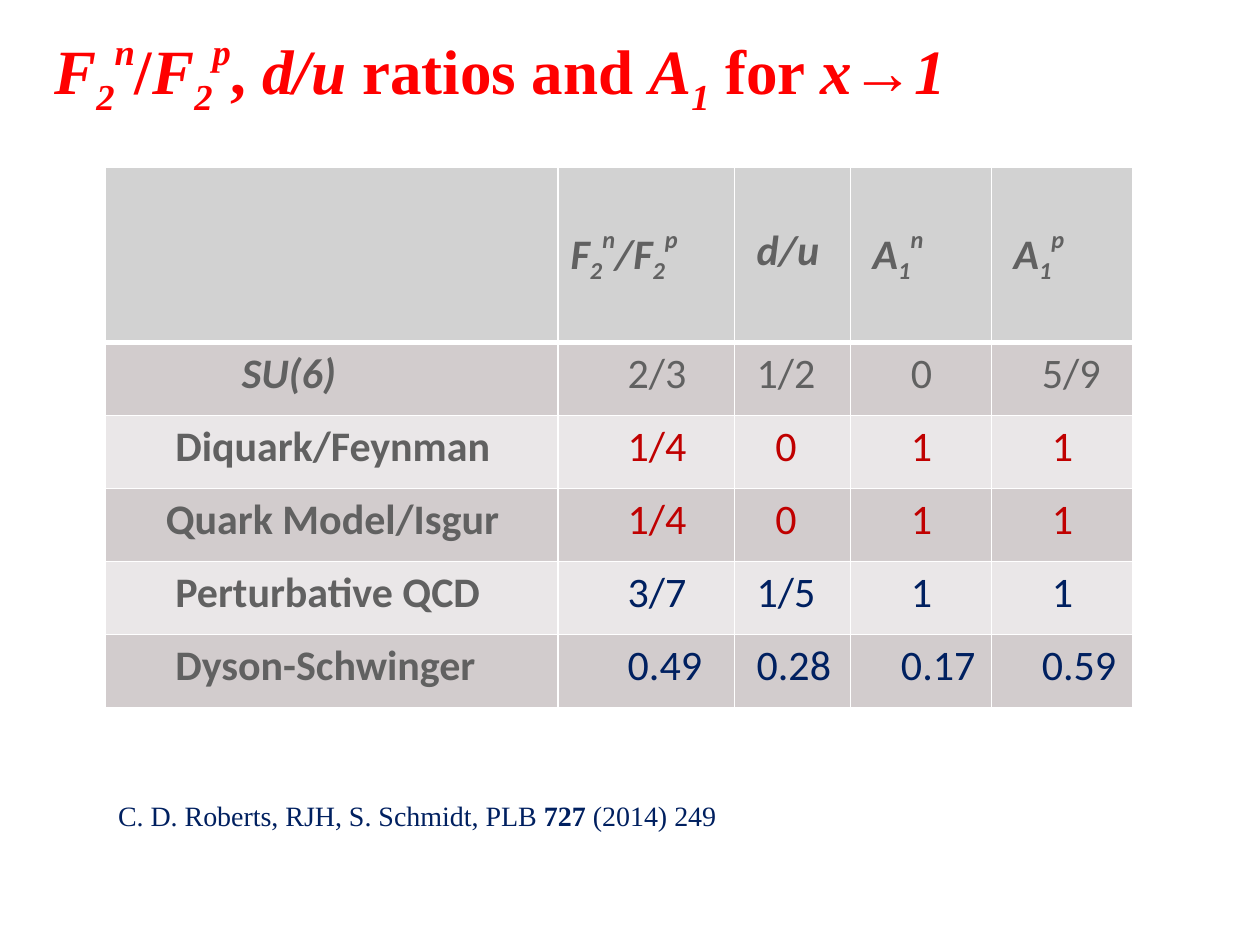
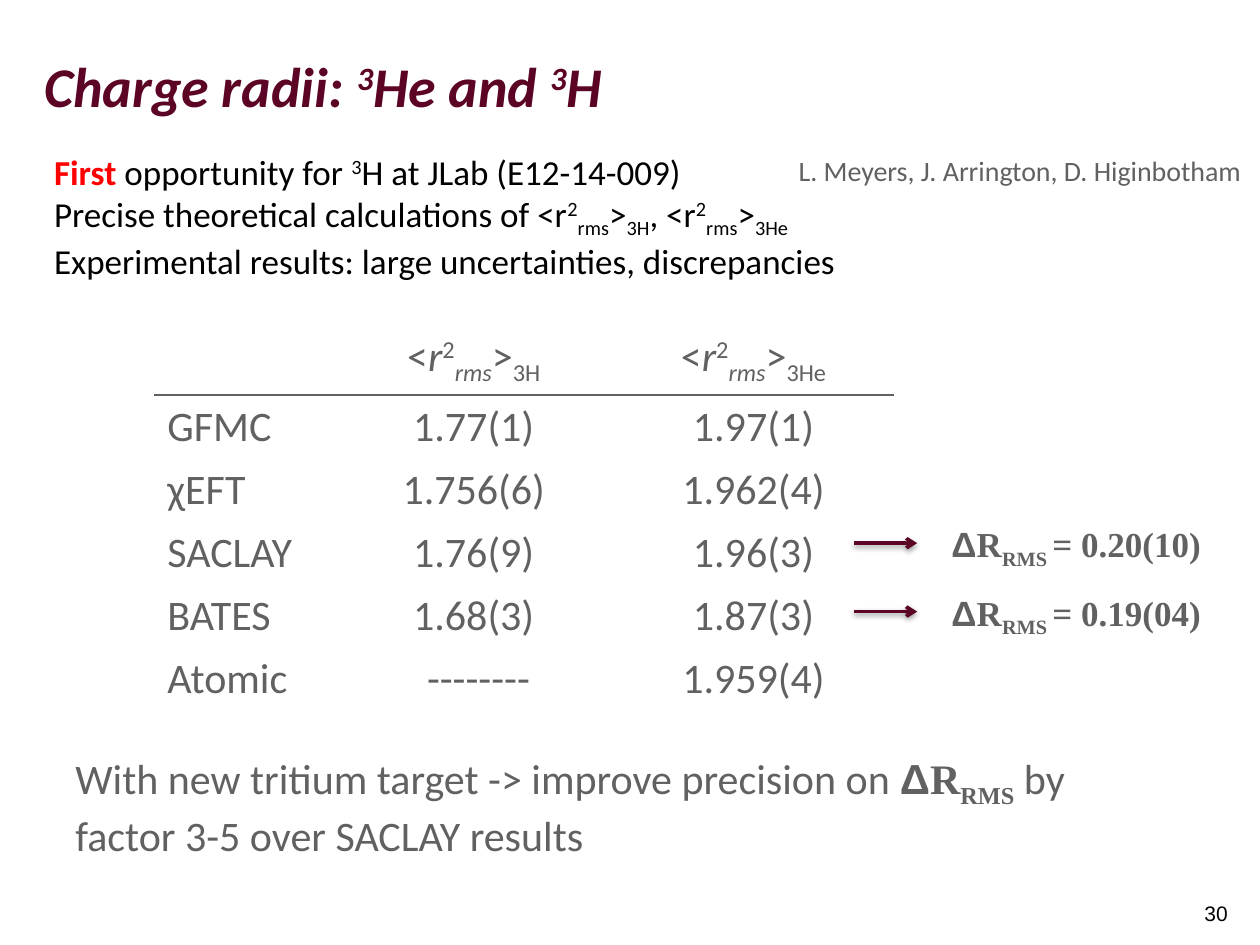
from dataclasses import dataclass, replace

import pptx
import pptx.dml.color
import pptx.enum.shapes
import pptx.enum.text
import pptx.util
from lxml import etree
from pptx.oxml.ns import qn

Cm, Pt = pptx.util.Cm, pptx.util.Pt
RGB = pptx.dml.color.RGBColor
ALIGN = pptx.enum.text.PP_ALIGN
ANCHOR = pptx.enum.text.MSO_ANCHOR

RED = RGB(0xFF, 0x00, 0x00)
DARK_RED = RGB(0xC0, 0x00, 0x00)
NAVY = RGB(0x00, 0x20, 0x60)
MAROON = RGB(0x5C, 0x04, 0x26)
GREY = RGB(0x61, 0x61, 0x61)
BLACK = RGB(0x00, 0x00, 0x00)
WHITE = RGB(0xFF, 0xFF, 0xFF)
HEADER_FILL = RGB(0xD2, 0xD2, 0xD2)
BAND_FILLS = RGB(0xD2, 0xCC, 0xCD), RGB(0xEA, 0xE7, 0xE8)


@dataclass
class Style:
    """Flags: b bold, i italic, ^ superscript, _ subscript."""
    font: str
    size: int
    color: RGB
    flags: str = ""
    sup: int = 30


SERIF_TITLE = Style("Times New Roman", 36, RED, "b", 46)
SANS_TITLE = Style("Calibri", 32, MAROON, "bi")
TABLE = Style("Calibri", 24, GREY)
RATIO_HEADER = replace(TABLE, flags="b", sup=50)
REFERENCE = Style("Times New Roman", 16, NAVY)
INTRO = Style("Calibri", 20, BLACK)
FIRST = replace(INTRO, color=RED)
AUTHORS = Style("Calibri", 16, GREY)
PAGE = Style("Arial", 12, BLACK)
DELTA = Style("Arial", 20, GREY)
DELTA_R = Style("Times New Roman", 20, GREY)

# A run is a string or (text, flags[, style]).
RATIO_TITLE = [("F", "bi"), ("2", "bi_"), ("n", "bi^"), "/", ("F", "bi"), ("2", "bi_"),
               ("p", "bi^"), ", ", ("d/u", "bi"), " ratios and ", ("A", "bi"),
               ("1", "bi_"), " for ", ("x", "bi"), "→", ("1", "bi")]
RATIO_COLS = [9.12, 3.56, 2.34, 2.84, 2.84]
RATIO_ROWS = [3.53] + [1.47] * 5
RATIO_HEADS = [
    (0, []),
    (0, [("F", "bi"), ("2", "bi_"), ("n", "bi^"), ("/F", "bi"), ("2", "bi_"), ("p", "bi^")]),
    (0.19, [("d/u", "bi")]),
    (0.19, [("A", "bi"), ("1", "bi_"), ("n", "bi^")]),
    (0.19, [("A", "bi"), ("1", "bi_"), ("p", "bi^")]),
]
# Model, flags, value colour, values, indents in cm
RATIO_MODELS = [
    ("SU(6)", "bi", GREY, ["2/3", "1/2", "0", "5/9"], [2.49, 1.15, 0.19, 0.96, 0.76]),
    ("Diquark/Feynman", "b", DARK_RED, ["1/4", "0", "1", "1"], [1.15, 1.15, 0.57, 0.96, 0.96]),
    ("Quark Model/Isgur", "b", DARK_RED, ["1/4", "0", "1", "1"], [0.96, 1.15, 0.57, 0.96, 0.96]),
    ("Perturbative QCD", "b", NAVY, ["3/7", "1/5", "1", "1"], [1.15, 1.15, 0.19, 0.96, 0.96]),
    ("Dyson-Schwinger", "b", NAVY, ["0.49", "0.28", "0.17", "0.59"],
     [1.15, 1.15, 0.19, 0.76, 0.76]),
]
CITATION = ["C. D. Roberts, RJH, S. Schmidt, PLB ", ("727", "b"), " (2014) 249"]

RADII_TITLE = ["Charge radii: ", ("3", "bi^"), "He and ", ("3", "bi^"), "H"]
INTRO_LINES = [
    [("First", "b", FIRST), " opportunity for ", ("3", "^"), "H at JLab (E12-14-009)"],
    ["Precise theoretical calculations of <r", ("2", "^"), ("rms", "_"), ">", ("3H", "_"),
     ", <r", ("2", "^"), ("rms", "_"), ">", ("3He", "_")],
    ["Experimental results: large uncertainties, discrepancies"],
]
AUTHOR_NAMES = ["L. Meyers, J. Arrington, D. Higinbotham"]
RADII_COLS = [3.61, 5.64, 5.64]
RADII_ROWS = [1.41] + [1.27] * 5
NUCLEI = ["3H", "3He"]
RADII = [
    ("GFMC", "1.77(1)", "1.97(1)"),
    ("χEFT", "1.756(6)", "1.962(4)"),
    ("SACLAY", "1.76(9)", "1.96(3)"),
    ("BATES", "1.68(3)", "1.87(3)"),
    ("Atomic", "--------", "1.959(4)"),
]
DIFFERENCES = ["= 0.20(10)", "= 0.19(04)"]
CONCLUSION = ["With new tritium target -> improve precision on ",
              ("Δ", "b", replace(DELTA, size=24)), ("R", "b", replace(DELTA_R, size=24)),
              ("RMS", "b_", replace(DELTA_R, size=24)), " by factor 3-5 over SACLAY results"]


def add_runs(p, runs, style):
    for run in runs:
        text, flags, look = (run, style.flags, style) if isinstance(run, str) else (
            *run, style)[:3]
        r = p.add_run()
        r.text = text
        r.font.name, r.font.size = look.font, Pt(look.size)
        r.font.color.rgb = look.color
        r.font.bold, r.font.italic = "b" in flags, "i" in flags
        if "^" in flags:
            r.font._element.set("baseline", str(look.sup * 1000))
        elif "_" in flags:
            r.font._element.set("baseline", "-25000")


def place(sp, box):
    sp.left, sp.top, sp.width, sp.height = (Cm(v) for v in box)


def add_title(slide, box, runs, style, anchor):
    sp = slide.shapes.title
    place(sp, box)
    tf = sp.text_frame
    tf.auto_size = pptx.enum.text.MSO_AUTO_SIZE.NONE
    tf.vertical_anchor = anchor
    tf.paragraphs[0].alignment = ALIGN.LEFT
    add_runs(tf.paragraphs[0], runs, style)
    return tf


def add_text(slide, box, lines, style, align=ALIGN.LEFT, anchor=ANCHOR.TOP, wrap=True):
    tf = slide.shapes.add_textbox(*(Cm(v) for v in box)).text_frame
    tf.word_wrap = wrap
    tf.vertical_anchor = anchor
    for n, runs in enumerate(lines):
        p = tf.add_paragraph() if n else tf.paragraphs[0]
        p.alignment = align
        add_runs(p, runs, style)


def set_border(cell, side, color, width):
    ln = etree.SubElement(cell._tc.get_or_add_tcPr(), qn(f"a:ln{side}"), w=str(Pt(width)))
    fill = etree.SubElement(ln, qn("a:solidFill"))
    etree.SubElement(fill, qn("a:srgbClr"), val=str(color))


def add_table(slide, left, top, cols, rows, rule_color, rule_width):
    """Table without banding; the rule runs under the header row."""
    frame = slide.shapes.add_table(len(rows), len(cols), Cm(left), Cm(top),
                                   Cm(sum(cols)), Cm(sum(rows)))
    table = frame.table
    table.first_row = table.horz_banding = False
    for column, width in zip(table.columns, cols):
        column.width = Cm(width)
    for n, height in enumerate(rows):
        table.rows[n].height = Cm(height)
        for cell in table.rows[n].cells:
            set_border(cell, "L", WHITE, 1)
            set_border(cell, "R", WHITE, 1)
            set_border(cell, "T", rule_color if n == 1 else WHITE, 1)
            set_border(cell, "B", rule_color if n == 0 else WHITE, rule_width if n == 0 else 1)
            cell.fill.background()
    return table


def fill_cell(cell, runs, style, indent=0.0, align=ALIGN.LEFT):
    p = cell.text_frame.paragraphs[0]
    p.alignment = align
    if indent:
        p._p.get_or_add_pPr().set("marL", str(Cm(indent)))
    add_runs(p, runs, style)


def add_arrow(slide, x1, x2, y):
    line = slide.shapes.add_connector(pptx.enum.shapes.MSO_CONNECTOR.STRAIGHT,
                                      Cm(x1), Cm(y), Cm(x2), Cm(y))
    line.line.color.rgb, line.line.width = MAROON, Pt(2)
    etree.SubElement(line.line._get_or_add_ln(), qn("a:tailEnd"), type="arrow")
    effects = etree.SubElement(line._element.spPr, qn("a:effectLst"))
    shadow = etree.SubElement(effects, qn("a:outerShdw"), blurRad="40000", dist="20000",
                              dir="5400000", rotWithShape="0")
    color = etree.SubElement(shadow, qn("a:srgbClr"), val=str(BLACK))
    etree.SubElement(color, qn("a:alpha"), val="38000")


def build_ratios(slide):
    add_title(slide, (0.84, 0.43, 23.7, 2.11), RATIO_TITLE, SERIF_TITLE, ANCHOR.MIDDLE)
    table = add_table(slide, 2.13, 3.38, RATIO_COLS, RATIO_ROWS, WHITE, 3)
    for cell, (indent, runs) in zip(table.rows[0].cells, RATIO_HEADS):
        cell.margin_top = Cm(1.16)
        cell.fill.solid()
        cell.fill.fore_color.rgb = HEADER_FILL
        fill_cell(cell, runs, RATIO_HEADER, indent)
    for n, (model, flags, color, values, indents) in enumerate(RATIO_MODELS):
        styles = [replace(TABLE, flags=flags)] + [replace(TABLE, color=color)] * len(values)
        for cell, text, style, indent in zip(table.rows[n + 1].cells, [model] + values,
                                             styles, indents):
            cell.fill.solid()
            cell.fill.fore_color.rgb = BAND_FILLS[n % 2]
            fill_cell(cell, [text], style, indent)
    add_text(slide, (2.13, 14.17, 23, 2.74), [CITATION], REFERENCE, anchor=ANCHOR.BOTTOM)


def build_radii(slide):
    add_text(slide, (23.93, 18.03, 1.07, 1.02), [["30"]], PAGE, ALIGN.RIGHT)
    tf = add_title(slide, (0.64, 0.84, 24.76, 2.11), RADII_TITLE, SANS_TITLE, ANCHOR.TOP)
    tf.margin_top = Cm(0.2)
    add_text(slide, (1.27, 15.04, 22.02, 2.31), [CONCLUSION], TABLE)
    add_text(slide, (0.84, 2.9, 22.43, 2.82), INTRO_LINES, INTRO)
    table = add_table(slide, 3.12, 6.55, RADII_COLS, RADII_ROWS, GREY, 1)
    for col, nucleus in enumerate(NUCLEI, 1):
        runs = ["<", ("r", "i"), ("2", "^"), ("rms", "i_"), ">", (nucleus, "_")]
        fill_cell(table.cell(0, col), runs, TABLE, align=ALIGN.CENTER)
    for row, texts in enumerate(RADII, 1):
        for col, text in enumerate(texts):
            fill_cell(table.cell(row, col), [text], TABLE,
                      indent=0.19 if text.startswith("-") else 0,
                      align=ALIGN.CENTER if col else ALIGN.LEFT)
    for n, value in enumerate(DIFFERENCES):
        top = 10.41 + 1.38 * n
        runs = [("Δ", "b", DELTA), ("R", "b"), ("RMS ", "b_"), (value, "b")]
        add_text(slide, (18.39, top, 6.07, 1.12), [runs], DELTA_R, ALIGN.RIGHT)
        add_arrow(slide, 17.22, 18.49, top + 0.54)
    add_text(slide, (15.85, 2.97, 9.55, 0.94), [AUTHOR_NAMES], AUTHORS, wrap=False)


def main():
    prs = pptx.Presentation()
    prs.slide_width, prs.slide_height = Cm(25.4), Cm(19.05)
    for build in (build_ratios, build_radii):
        build(prs.slides.add_slide(prs.slide_layouts[5]))
    prs.save("out.pptx")


if __name__ == "__main__":
    main()
